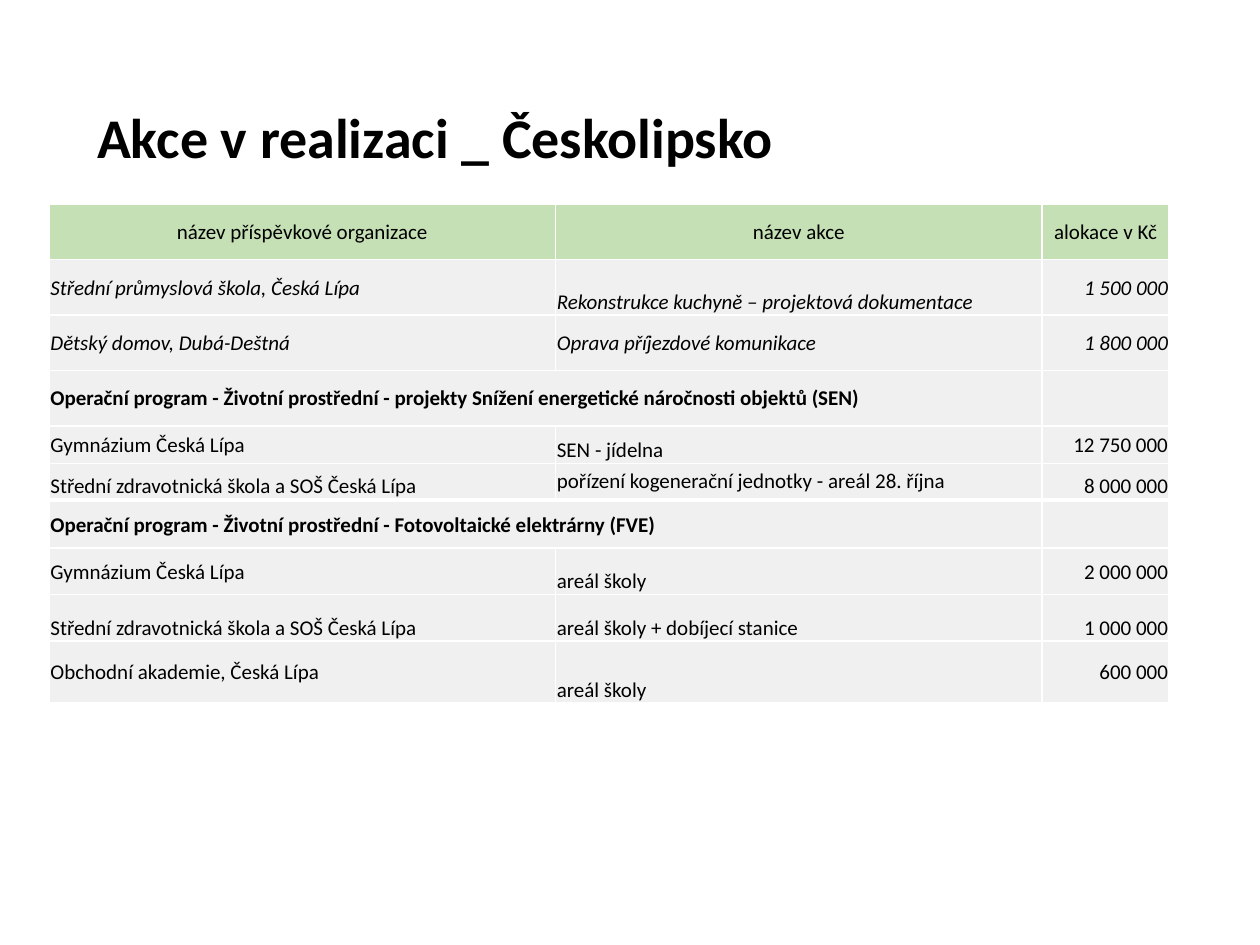
from dataclasses import dataclass

from lxml.etree import SubElement
from pptx import Presentation
from pptx.dml.color import RGBColor
from pptx.enum.text import MSO_ANCHOR as Anchor, MSO_AUTO_SIZE as AutoSize, PP_ALIGN as Align
from pptx.oxml.ns import qn
from pptx.util import Inches, Pt

FONT = "Calibri"
BLACK, WHITE, GREEN, GREY = "000000", "FFFFFF", "C5E0B4", "F0F0F0"
COLUMN_WIDTHS = (4.02, 3.86, 1.01)
COLUMN_ALIGNS = (Align.LEFT, Align.LEFT, Align.RIGHT)
MARGINS = {"margin_left": 0.01, "margin_right": 0.01, "margin_top": 0.01, "margin_bottom": 0}
ANCHORS = {"m": Anchor.MIDDLE, "b": Anchor.BOTTOM}


@dataclass
class Row:
    height: float
    texts: tuple[str, str, str]
    anchors: str = "mmm"
    italic: bool = False
    heading: bool = False
    section: bool = False


def section(height: float, text: str) -> Row:
    return Row(height, (text, "", ""), section=True)


PROJECTS = [
    Row(0.44, ("název příspěvkové organizace", "název akce", "alokace v Kč"), heading=True),
    Row(0.44, ("Střední průmyslová škola, Česká Lípa",
               "Rekonstrukce kuchyně – projektová dokumentace", "1 500 000"), "mbm", italic=True),
    Row(0.44, ("Dětský domov, Dubá-Deštná", "Oprava příjezdové komunikace", "1 800 000"),
        italic=True),
    section(0.44, "Operační program - Životní prostřední - projekty Snížení energetické "
                  "náročnosti objektů (SEN)"),
    Row(0.3, ("Gymnázium Česká Lípa", "SEN - jídelna", "12 750 000"), "mbm"),
    Row(0.28, ("Střední zdravotnická škola a SOŠ Česká Lípa",
               "pořízení kogenerační jednotky - areál 28. října", "8 000 000"), "bmb"),
]
PHOTOVOLTAICS = [
    section(0.37, "Operační program - Životní prostřední - Fotovoltaické elektrárny (FVE)"),
    Row(0.37, ("Gymnázium Česká Lípa", "areál školy", "2 000 000"), "mbm"),
    Row(0.37, ("Střední zdravotnická škola a SOŠ Česká Lípa",
               "areál školy + dobíjecí stanice", "1 000 000"), "bbb"),
    Row(0.49, ("Obchodní akademie, Česká Lípa", "areál školy", "600 000"), "mbm"),
]


def rgb(color: str) -> RGBColor:
    return RGBColor.from_string(color)


def format_font(font, size: float, bold: bool = False, italic: bool = False) -> None:
    values = {"name": FONT, "size": Pt(size), "bold": bold, "italic": italic}
    for attribute, value in values.items():
        setattr(font, attribute, value)
    font.color.rgb = rgb(BLACK)


def add_borders(cell) -> None:
    properties = cell._tc.get_or_add_tcPr()
    for side in ("lnL", "lnR", "lnT", "lnB"):
        line = SubElement(properties, qn(f"a:{side}"), w=str(Pt(1)))
        fill = SubElement(line, qn("a:solidFill"))
        SubElement(fill, qn("a:srgbClr"), val=WHITE)


def fill_cell(cell, row: Row, column: int) -> None:
    add_borders(cell)
    cell.fill.solid()
    cell.fill.fore_color.rgb = rgb(GREEN if row.heading else GREY)
    for margin, length in MARGINS.items():
        setattr(cell, margin, Inches(length))
    cell.vertical_anchor = ANCHORS[row.anchors[column]]
    paragraph = cell.text_frame.paragraphs[0]
    paragraph.alignment = Align.CENTER if row.heading else COLUMN_ALIGNS[column]
    if row.texts[column]:
        run = paragraph.add_run()
        run.text = row.texts[column]
        format_font(run.font, 12, row.section, row.italic)


def add_allocations(slide, top: float, rows: list[Row]) -> None:
    height = sum(row.height for row in rows)
    table = slide.shapes.add_table(
        len(rows), len(COLUMN_WIDTHS), Inches(0.39), Inches(top),
        Inches(sum(COLUMN_WIDTHS)), Inches(height)).table
    for column, width in zip(table.columns, COLUMN_WIDTHS):
        column.width = Inches(width)
    for index, row in enumerate(rows):
        table.rows[index].height = Inches(row.height)
        for column in range(len(COLUMN_WIDTHS)):
            fill_cell(table.cell(index, column), row, column)
        if row.section:
            table.cell(index, 0).merge(table.cell(index, 1))


def add_title(slide, text: str) -> None:
    title = slide.shapes.title
    title.left, title.top, title.width, title.height = map(Inches, (0.67, 0.76, 8.35, 0.64))
    frame = title.text_frame
    frame.auto_size = AutoSize.NONE
    frame.vertical_anchor = Anchor.MIDDLE
    frame.text = text
    paragraph = frame.paragraphs[0]
    paragraph.alignment = Align.LEFT
    format_font(paragraph.runs[0].font, 32, bold=True)


def main() -> None:
    presentation = Presentation()
    presentation.slide_width, presentation.slide_height = Inches(10), Inches(7.5)
    slide = presentation.slides.add_slide(presentation.slide_layouts.get_by_name("Title Only"))
    add_title(slide, "Akce v realizaci _ Českolipsko")
    add_allocations(slide, 1.62, PROJECTS)
    add_allocations(slide, 3.98, PHOTOVOLTAICS)
    presentation.save("out.pptx")


if __name__ == "__main__":
    main()
